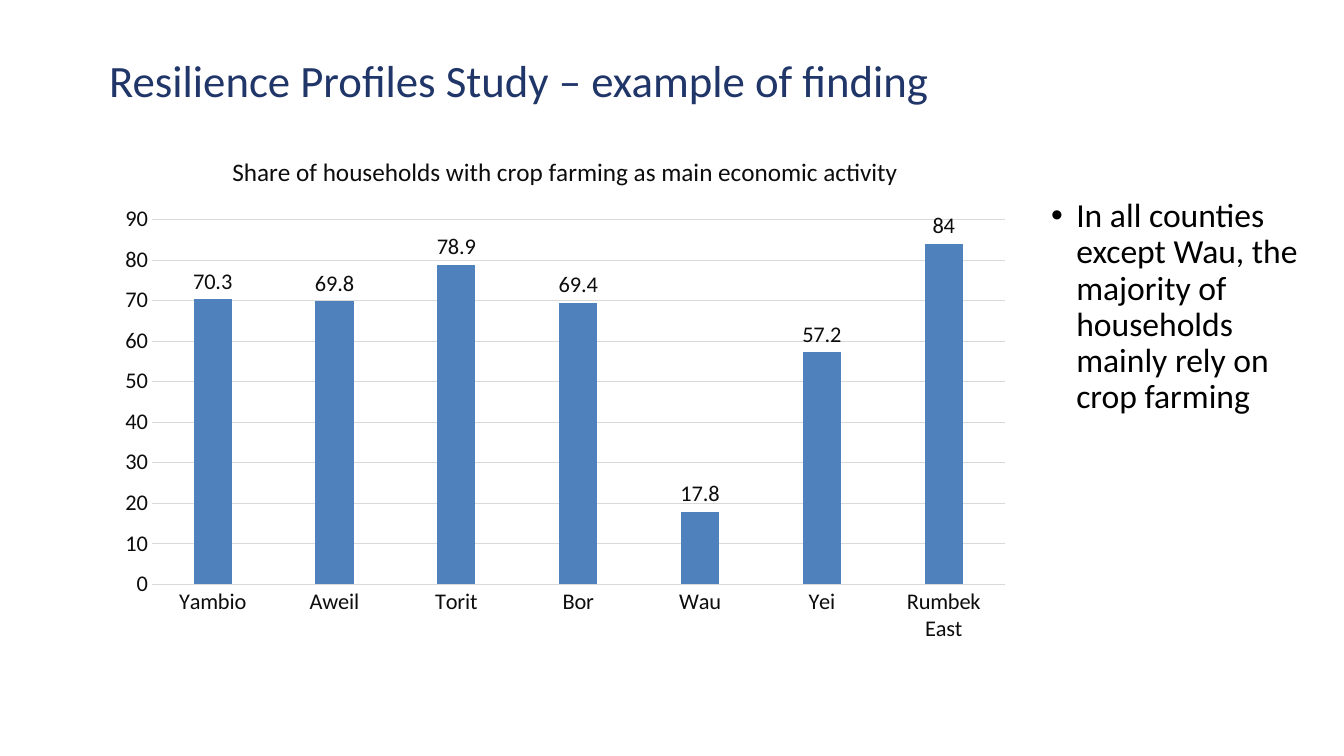
from dataclasses import dataclass

from lxml import etree
from pptx import Presentation
from pptx import util as u
from pptx.chart.data import CategoryChartData
from pptx.dml.color import RGBColor
from pptx.enum import chart as ce, text as te
from pptx.oxml.ns import qn


@dataclass(frozen=True)
class Theme:
    face: str = "Calibri"
    navy: str = "203568"
    black: str = "000000"
    ink: str = "0D0D0D"
    grid: str = "D9D9D9"
    bar: str = "4F81BD"
    head: int = 32
    body: int = 24
    name: int = 18
    label: int = 16


def style(font, face, size, color):
    font.name = face
    font.size = u.Pt(size)
    font.bold = False
    font.color.rgb = RGBColor.from_string(color)


def write(frame, words, face, size, color, bullet=False, anchor=te.MSO_ANCHOR.TOP):
    frame.word_wrap = True
    frame.auto_size = te.MSO_AUTO_SIZE.NONE
    frame.vertical_anchor = anchor
    para = frame.paragraphs[0]
    para.alignment = te.PP_ALIGN.LEFT
    if bullet:
        props = para._p.get_or_add_pPr()
        props.set("marL", str(u.Cm(0.635)))
        props.set("indent", str(-u.Cm(0.635)))
        etree.SubElement(props, qn("a:buFont")).set("typeface", "Arial")
        etree.SubElement(props, qn("a:buChar")).set("char", "•")
        para.line_spacing = 0.9
    run = para.add_run()
    run.text = words
    style(run.font, face, size, color)


class Page:
    def __init__(self, deck, theme):
        self.theme = theme
        self.slide = deck.slides.add_slide(deck.slide_layouts[5])

    def title(self, words, *box):
        shape = self.slide.shapes.title
        shape.left, shape.top, shape.width, shape.height = map(u.Cm, box)
        frame = shape.text_frame
        frame.margin_left = frame.margin_right = 0
        frame.margin_top = frame.margin_bottom = 0
        write(frame, words, self.theme.face, self.theme.head, self.theme.navy,
              anchor=te.MSO_ANCHOR.MIDDLE)

    def bullet(self, words, *box):
        shape = self.slide.shapes.add_textbox(*map(u.Cm, box))
        write(shape.text_frame, words, self.theme.face, self.theme.body,
              self.theme.black, bullet=True)

    def rule(self, line):
        line.color.rgb = RGBColor.from_string(self.theme.grid)
        line.width = u.Pt(0.75)

    def columns(self, title, shares, *box):
        look = self.theme
        data = CategoryChartData()
        data.categories = list(shares)
        data.add_series("Series 1", list(shares.values()))
        chart = self.slide.shapes.add_chart(
            ce.XL_CHART_TYPE.COLUMN_CLUSTERED, *map(u.Cm, box), data).chart
        style(chart.font, look.face, 10, look.black)
        chart.has_legend = False
        chart.has_title = True
        write(chart.chart_title.text_frame, title, look.face, look.name, look.ink)
        chart.chart_title.include_in_layout = False

        for axis in (chart.category_axis, chart.value_axis):
            axis.major_tick_mark = axis.minor_tick_mark = ce.XL_TICK_MARK.NONE
            style(axis.tick_labels.font, look.face, look.label, look.ink)
        self.rule(chart.category_axis.format.line)
        scale = chart.value_axis
        scale.minimum_scale, scale.maximum_scale, scale.major_unit = 0, 90, 10
        scale.format.line.fill.background()
        self.rule(scale.major_gridlines.format.line)

        plot = chart.plots[0]
        plot.gap_width, plot.overlap = 219, -27
        plot.vary_by_categories = False
        bars = plot.series[0]
        bars.format.fill.solid()
        bars.format.fill.fore_color.rgb = RGBColor.from_string(look.bar)
        marks = bars.data_labels
        marks.show_value = True
        marks.position = ce.XL_LABEL_POSITION.OUTSIDE_END
        style(marks.font, look.face, look.label, look.ink)


def main():
    deck = Presentation()
    deck.slide_width, deck.slide_height = u.Cm(33.87), u.Cm(19.05)
    page = Page(deck, Theme())
    page.title("Resilience Profiles Study – example of finding", 2.75, 1.27, 29.4, 1.48)
    shares = {"Yambio": 70.3, "Aweil": 69.8, "Torit": 78.9, "Bor": 69.4,
              "Wau": 17.8, "Yei": 57.2, "Rumbek East": 84}
    page.columns("Share of households with crop farming as main economic activity",
                 shares, 2.7, 3.38, 23.08, 13.08)
    page.bullet("In all counties except Wau, the majority of households "
                "mainly rely on crop farming", 26.24, 4.88, 6.98, 5.92)
    deck.save("out.pptx")


if __name__ == "__main__":
    main()
